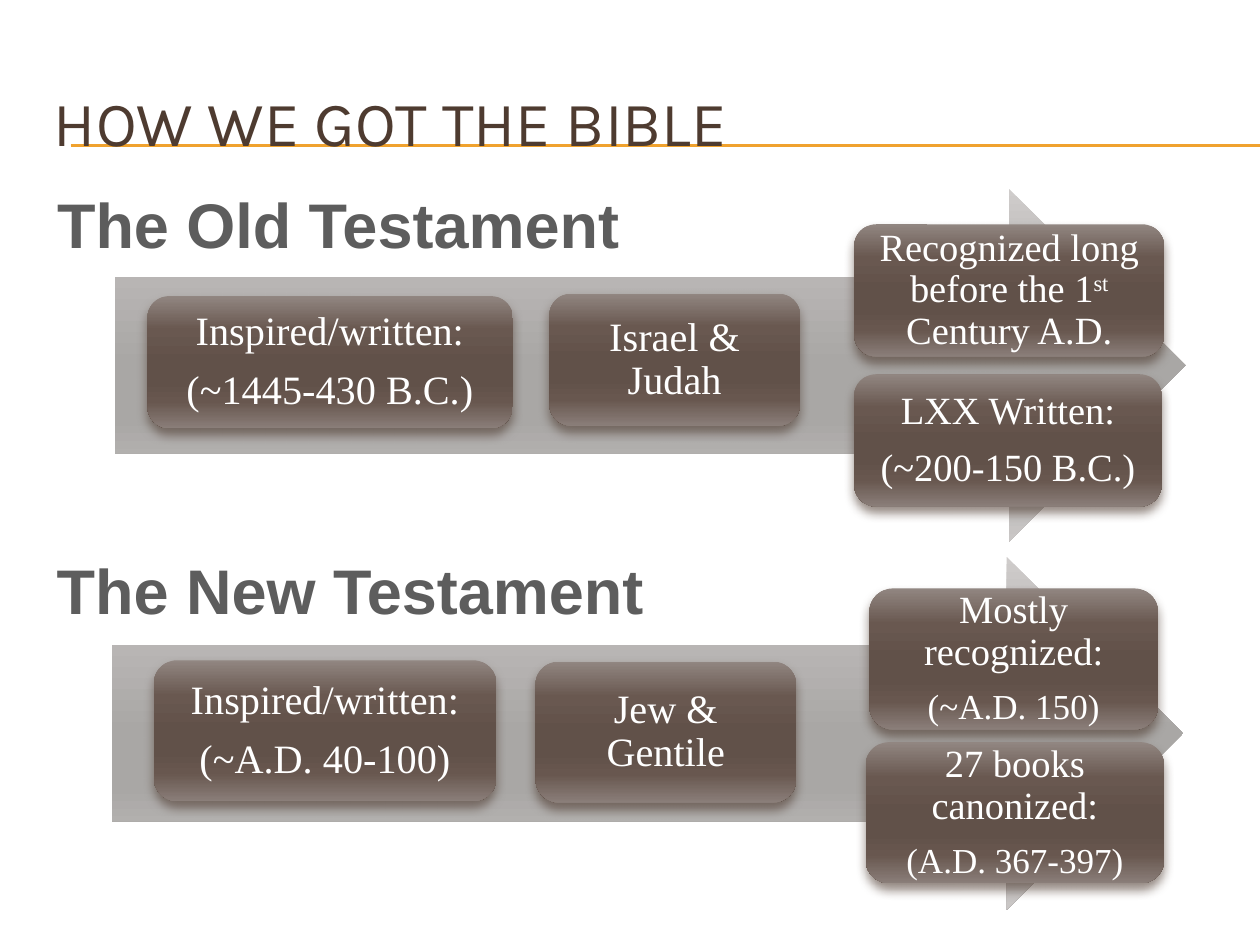
from lxml import etree
from pptx import Presentation
from pptx import util as u
from pptx.dml.color import RGBColor
from pptx.enum import shapes, text
from pptx.oxml.ns import qn

GOLD = RGBColor(0xF0, 0xA2, 0x2E)
BROWN = RGBColor(0x4E, 0x3B, 0x30)
GREY = RGBColor(0x5D, 0x5D, 0x5D)
WHITE = RGBColor(0xFF, 0xFF, 0xFF)
STOPS = (0, 25, 50, 65, 80, 100)
PALE = [RGBColor.from_string(c) for c in
        ("CFCCCB", "B8B5B4", "A9A7A5", "A9A7A5", "B7B4B3", "C9C6C5")]
DARK = [RGBColor.from_string(c) for c in
        ("918681", "695850", "615149", "615149", "68574F", "8A7E79")]
SERIF = "Times New Roman"


def add_run(para, words, size, font, color, bold=False):
    run = para.add_run()
    run.text = words
    run.font.size = u.Pt(size)
    run.font.name = font
    run.font.bold = bold
    run.font.color.rgb = color
    return run


def add_label(slide, box, words, size, font, color, bold=False, wrap=True):
    frame = slide.shapes.add_textbox(*map(u.Inches, box)).text_frame
    frame.word_wrap = wrap
    para = frame.paragraphs[0]
    if bold:
        para.alignment = text.PP_ALIGN.CENTER
    else:
        frame.vertical_anchor = text.MSO_ANCHOR.MIDDLE
    add_run(para, words, size, font, color, bold)


def add_rule(slide, y):
    rule = slide.shapes.add_connector(
        shapes.MSO_CONNECTOR.STRAIGHT,
        u.Inches(0.56), u.Inches(y), u.Inches(10), u.Inches(y))
    rule.line.color.rgb = GOLD
    rule.line.width = u.Pt(0.75)
    etree.SubElement(rule._element.spPr, qn("a:effectLst"))


def add_shade(slide, kind, box, colors):
    """Add a borderless shape with a top-to-bottom gradient."""
    shape = slide.shapes.add_shape(kind, *map(u.Inches, box))
    shape.shadow.inherit = False
    shape.line.fill.background()
    shape.fill.gradient()
    shape.fill.gradient_angle = 270
    stops = shape._element.spPr.find(".//" + qn("a:gsLst"))
    for old in list(stops):
        stops.remove(old)
    for pos, color in zip(STOPS, colors):
        stop = etree.SubElement(stops, qn("a:gs"), pos=str(pos * 1000))
        etree.SubElement(stop, qn("a:srgbClr"), val=str(color))
    return shape


def add_shadow(shape):
    effects = shape._element.spPr.find(qn("a:effectLst"))
    shadow = etree.SubElement(
        effects, qn("a:outerShdw"), blurRad=str(u.Pt(6)), dist=str(u.Pt(4)),
        dir="5400000", rotWithShape="0")
    color = etree.SubElement(shadow, qn("a:srgbClr"), val=str(BROWN))
    etree.SubElement(color, qn("a:alpha"), val="60000")


def add_card(slide, box, lines, inset):
    """Each line is (size, run, run...); every second run is raised."""
    card = add_shade(slide, shapes.MSO_SHAPE.ROUNDED_RECTANGLE, box, DARK)
    add_shadow(card)
    frame = card.text_frame
    frame.word_wrap = True
    frame.vertical_anchor = text.MSO_ANCHOR.MIDDLE
    frame.margin_left = frame.margin_right = u.Inches(inset)
    frame.margin_top = frame.margin_bottom = u.Inches(inset)
    for i, (size, *runs) in enumerate(lines):
        para = frame.add_paragraph() if i else frame.paragraphs[0]
        para.alignment = text.PP_ALIGN.CENTER
        para.line_spacing = 0.9
        para.space_after = u.Pt(9)
        for j, words in enumerate(runs):
            run = add_run(para, words, size, SERIF, WHITE)
            if j % 2:
                run.font._element.set("baseline", "30000")


def add_era(slide, arrow, height, cards):
    add_shade(slide, shapes.MSO_SHAPE.RIGHT_ARROW, (*arrow, 8.5, 2.8), PALE)
    for x, y, width, inset, lines in cards:
        add_card(slide, (x, y, width, height), lines, inset)


def main():
    deck = Presentation()
    deck.slide_width, deck.slide_height = u.Inches(10), u.Inches(7.5)
    slide = deck.slides.add_slide(deck.slide_layouts[6])

    # Title and its double rule
    for y in (1.15, 1.16):
        add_rule(slide, y)
    add_label(slide, (0.33, 0.5, 9.5, 0.92), "HOW WE GOT THE BIBLE",
              36, "Karla", BROWN)

    # Old Testament arrow
    add_era(slide, (0.91, 1.5), 1.05, [
        (1.17, 2.35, 2.9, 0.1,
         [(23, "Inspired/written:"), (23, "(~1445-430 B.C.)")]),
        (6.78, 2.97, 2.44, 0.09,
         [(22, "LXX Written:"), (22, "(~200-150 B.C.)")]),
        (4.36, 2.33, 1.99, 0.1, [(23, "Israel & Judah")]),
        (6.78, 1.78, 2.46, 0.09,
         [(22, "Recognized long before the 1", "st", " Century A.D.")]),
    ])

    # New Testament arrow
    add_era(slide, (0.89, 4.42), 1.12, [
        (1.22, 5.24, 2.72, 0.1,
         [(23, "Inspired/written:"), (23, "(~A.D. 40-100)")]),
        (6.9, 4.67, 2.29, 0.09,
         [(22, "Mostly recognized:"), (20, "(~A.D. 150)")]),
        (6.87, 5.89, 2.37, 0.09,
         [(22, "27 books canonized:"), (20, "(A.D. 367-397)")]),
        (4.25, 5.25, 2.07, 0.1, [(23, "Jew & Gentile")]),
    ])

    # Section headings
    for y, width, words in ((1.42, 4.71, "The Old Testament"),
                            (4.33, 4.9, "The New Testament")):
        add_label(slide, (0.33, y, width, 0.71), words, 36, "Arial", GREY,
                  bold=True, wrap=False)

    deck.save("out.pptx")


if __name__ == "__main__":
    main()
